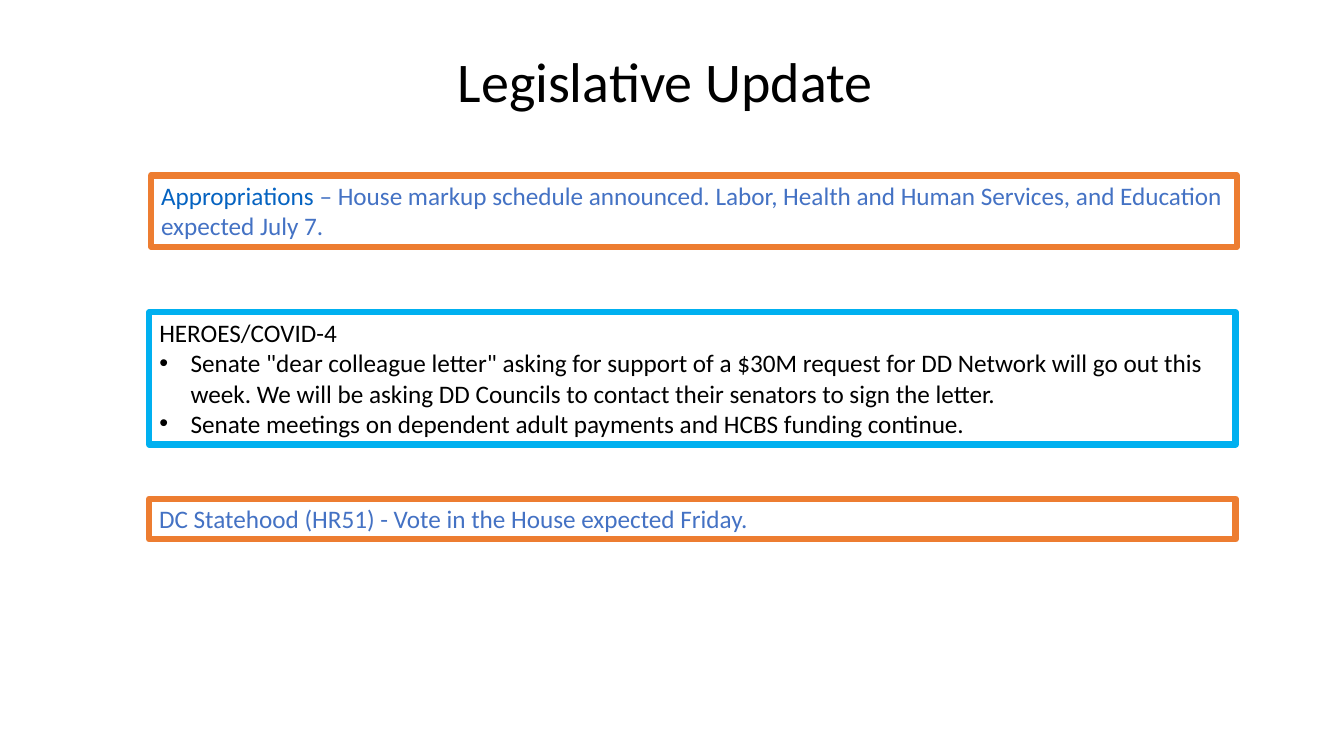
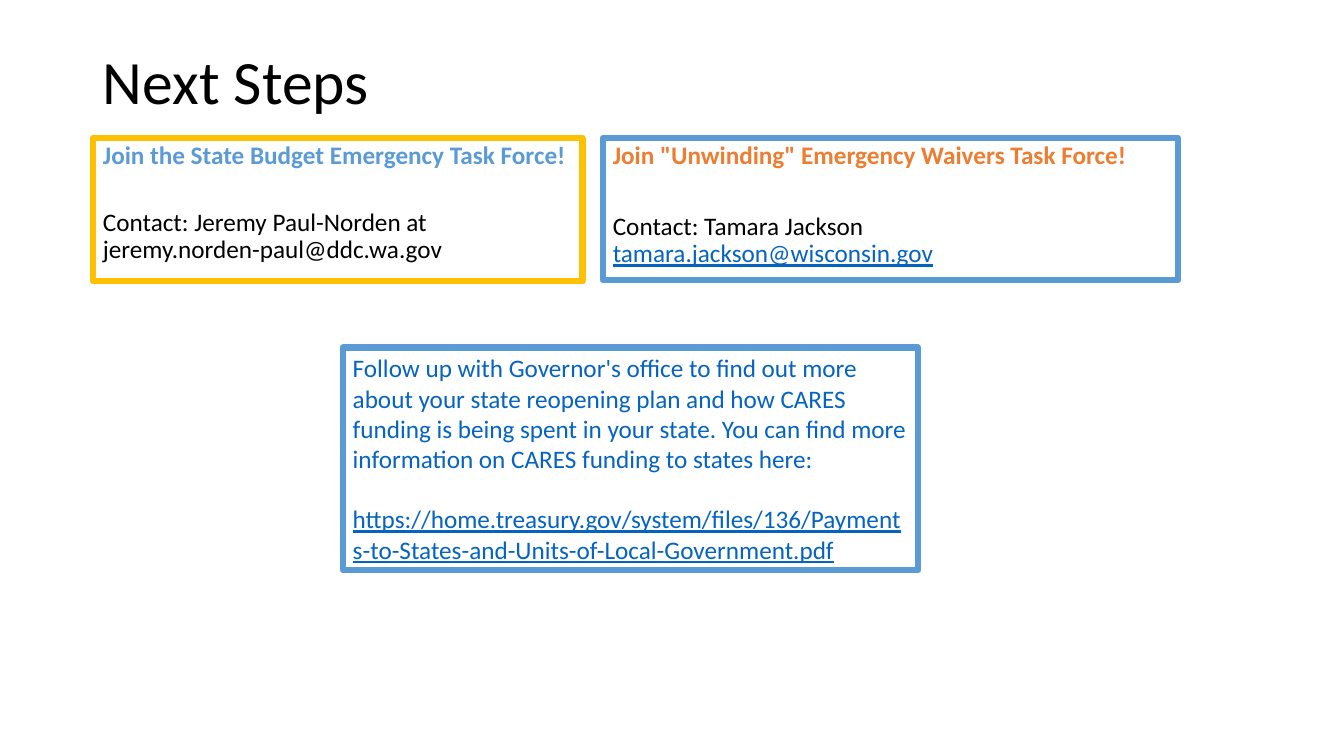
from dataclasses import dataclass

from lxml.etree import SubElement
from pptx import Presentation
from pptx.dml.color import RGBColor
from pptx.enum.text import MSO_ANCHOR as Anchor, MSO_AUTO_SIZE as AutoSize, PP_ALIGN as Align
from pptx.oxml.ns import qn
from pptx.util import Cm, Pt

# Colours
BLACK = RGBColor(0x00, 0x00, 0x00)
ORANGE = RGBColor(0xED, 0x7D, 0x31)
GOLD = RGBColor(0xFF, 0xC0, 0x00)
CYAN = RGBColor(0x00, 0xB0, 0xF0)
BLUE = RGBColor(0x44, 0x72, 0xC4)
LIGHT_BLUE = RGBColor(0x5B, 0x9B, 0xD5)
LINK_BLUE = RGBColor(0x05, 0x63, 0xC1)

# Layouts of the default template
TITLE_AND_CONTENT, TWO_CONTENT = 1, 3


@dataclass
class Span:
    """A stretch of text in one style."""
    text: str
    color: RGBColor = BLACK
    bold: bool = False
    underline: bool = False


@dataclass
class Para:
    """A paragraph made of spans."""
    spans: list
    bullet: bool = False
    line_spacing: float = 1.0
    space_after: float = 0


class Deck:
    """Holds the shared style and the current slide."""
    font = "Calibri"
    body_size = Pt(18)
    border = Pt(4.5)
    hanging = Cm(0.79)

    def __init__(self):
        self.prs = Presentation()
        self.prs.slide_width, self.prs.slide_height = Cm(33.87), Cm(19.05)
        self.slide = None

    def new_slide(self, layout):
        self.slide = self.prs.slides.add_slide(self.prs.slide_layouts[layout])

    def place(self, shape, at):
        shape.left, shape.top, shape.width, shape.height = map(Cm, at)

    def style(self, run, size, color, bold=False, underline=False):
        font = run.font
        font.name, font.size, font.bold, font.underline = self.font, size, bold, underline
        font.color.rgb = color

    def title(self, text, at, size, anchor, line_spacing=1.0):
        heading = self.slide.shapes.title
        self.place(heading, at)
        frame = heading.text_frame
        frame.text = text
        frame.auto_size, frame.vertical_anchor = AutoSize.NONE, anchor
        line = frame.paragraphs[0]
        line.alignment, line.line_spacing = Align.LEFT, line_spacing
        self.style(line.runs[0], Pt(size), BLACK)

    def panel(self, at, border_color, paras, placeholder=None):
        """A bordered box; uses the body placeholder with the given index, if any."""
        if placeholder is None:
            box = self.slide.shapes.add_textbox(*map(Cm, at))
        else:
            box = self.slide.placeholders[placeholder]
            self.place(box, at)
        box.line.color.rgb, box.line.width = border_color, self.border
        frame = box.text_frame
        frame.word_wrap, frame.auto_size = True, AutoSize.NONE
        frame.vertical_anchor = Anchor.TOP
        for i, para in enumerate(paras):
            line = frame.add_paragraph() if i else frame.paragraphs[0]
            self.bullet(line, para.bullet)
            line.line_spacing = para.line_spacing
            line.space_before, line.space_after = Pt(0), Pt(para.space_after)
            for span in para.spans:
                run = line.add_run()
                run.text = span.text
                self.style(run, self.body_size, span.color, span.bold, span.underline)

    def bullet(self, line, shown):
        props = line._p.get_or_add_pPr()
        indent = self.hanging if shown else 0
        props.set("marL", str(indent))
        props.set("indent", str(-indent))
        if shown:
            SubElement(props, qn("a:buFont"), typeface="Arial")
            SubElement(props, qn("a:buChar"), char="•")
        else:
            SubElement(props, qn("a:buNone"))


def legislative_update(deck):
    deck.new_slide(TITLE_AND_CONTENT)
    deck.title("Legislative Update", (11.28, 1.04, 11.3, 1.96), 40, Anchor.TOP)
    deck.panel((3.81, 4.42, 27.36, 1.8), ORANGE, [
        Para([Span("Appropriations ", LINK_BLUE),
              Span("– House markup schedule announced. Labor, Health and Human Services, "
                   "and Education expected July 7.", BLUE)]),
    ])
    deck.panel((3.76, 7.87, 27.38, 3.33), CYAN, [
        Para([Span("HEROES/COVID-4")]),
        Para([Span('Senate "dear colleague letter" asking for support of a $30M request for '
                   "DD Network will go out this week. We will be asking DD Councils to contact "
                   "their senators to sign the letter.")], bullet=True),
        Para([Span("Senate meetings on dependent adult payments and HCBS funding continue.")],
             bullet=True),
    ], placeholder=1)
    deck.panel((3.76, 12.57, 27.38, 1.02), ORANGE, [
        Para([Span("DC Statehood (HR51) - Vote in the House expected Friday.", BLUE)]),
    ])


def next_steps(deck):
    deck.new_slide(TWO_CONTENT)
    # The unused comparison bodies are the two task force panels
    deck.title("Next Steps", (2.34, 1.02, 29.21, 2.21), 44, Anchor.MIDDLE, 0.9)

    def task_force(at, border_color, call, call_color, gap, contact, placeholder):
        deck.panel(at, border_color, [
            Para([Span(call, call_color, bold=True)], line_spacing=0.9, space_after=gap),
            Para(contact, line_spacing=0.9),
        ], placeholder)

    task_force((2.34, 3.48, 12.34, 3.61), GOLD,
               "Join the State Budget Emergency Task Force!", LIGHT_BLUE, 28,
               [Span("Contact: Jeremy Paul-Norden at jeremy.norden-paul@ddc.wa.gov")], 1)
    task_force((15.19, 3.48, 14.5, 3.58), LIGHT_BLUE,
               'Join "Unwinding" Emergency Waivers Task Force!', ORANGE, 31,
               [Span("Contact: Tamara Jackson "),
                Span("tamara.jackson@wisconsin.gov", LINK_BLUE, underline=True)], 2)

    # Follow-up on funding
    deck.panel((8.64, 8.76, 14.5, 5.61), LIGHT_BLUE, [
        Para([Span("Follow up with Governor's office to find out more about your state reopening "
                   "plan and how CARES funding is being spent in your state. You can find more "
                   "information on CARES funding to states here:", LINK_BLUE)]),
        Para([Span(" https://home.treasury.gov/system/files/136/"
                   "Payments-to-States-and-Units-of-Local-Government.pdf",
                   LINK_BLUE, underline=True)]),
    ])


def main():
    deck = Deck()
    legislative_update(deck)
    next_steps(deck)
    deck.prs.save("out.pptx")


if __name__ == "__main__":
    main()
